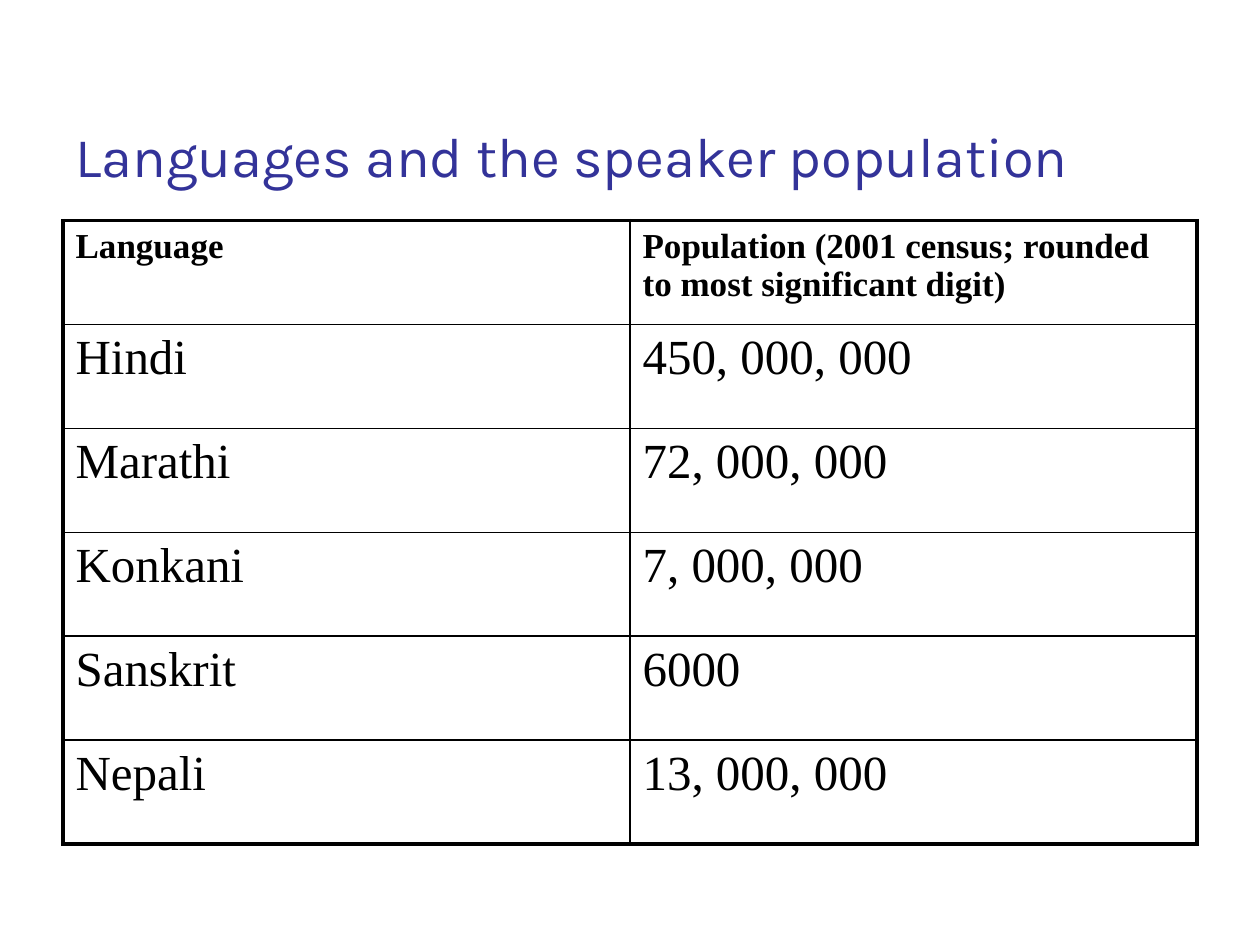
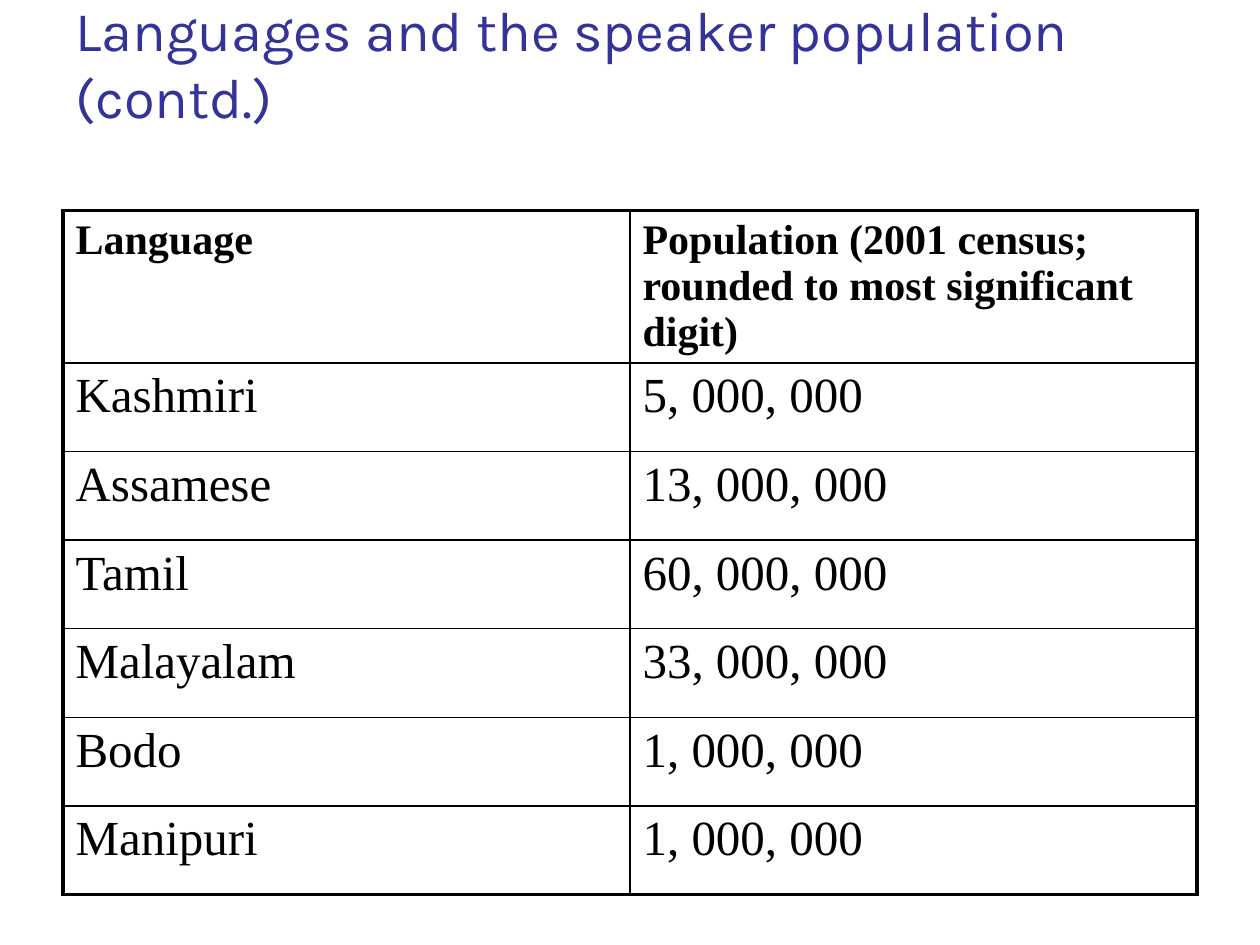
import pptx
import pptx.util
import pptx.dml.color
import pptx.enum.text
import lxml.etree
from dataclasses import dataclass


@dataclass(frozen=True)
class Theme:
    title_color: str = "333399"
    ink: str = "000000"
    title_font: str = "Karla"
    table_font: str = "Times New Roman"
    title_size: int = 32
    body_size: int = 28
    outer_line: float = 2.25
    inner_line: float = 1


THEME = Theme()
HEADINGS = ("Language", "Population (2001 census; rounded to most significant digit)")
TITLE = "Languages and the speaker population"

SLIDES = [
    dict(
        title=TITLE, title_rows=12.5,
        table_top=17.5, table_rows=49.5, header_rows=8.25, header_size=20,
        populations=[
            ("Hindi", "450, 000, 000"),
            ("Marathi", "72, 000, 000"),
            ("Konkani", "7, 000, 000"),
            ("Sanskrit", "6000"),
            ("Nepali", "13, 000, 000"),
        ],
    ),
    dict(
        title=f"{TITLE} (contd.)", title_rows=7.8,
        table_top=16.7, table_rows=54.3, header_rows=12.1, header_size=24,
        populations=[
            ("Kashmiri", "5, 000, 000"),
            ("Assamese", "13, 000, 000"),
            ("Tamil", "60, 000, 000"),
            ("Malayalam", "33, 000, 000"),
            ("Bodo", "1, 000, 000"),
            ("Manipuri", "1, 000, 000"),
        ],
    ),
]


def write_text(text_frame, text, *, font, size, color, bold=False):
    """Put formatted text in the first paragraph of a frame."""
    run = text_frame.paragraphs[0].add_run()
    run.text = text
    run.font.name = font
    run.font.size = pptx.util.Pt(size)
    run.font.bold = bold
    run.font.color.rgb = pptx.dml.color.RGBColor.from_string(color)


def set_borders(cell, color, widths):
    """Draw the cell's sides; widths maps L, R, T, B (in that order) to points."""
    properties = cell._tc.get_or_add_tcPr()
    namespace = properties.nsmap["a"]
    for position, (side, width) in enumerate(widths.items()):
        line = lxml.etree.Element(f"{{{namespace}}}ln{side}", w=str(pptx.util.Pt(width)))
        fill = lxml.etree.SubElement(line, f"{{{namespace}}}solidFill")
        lxml.etree.SubElement(fill, f"{{{namespace}}}srgbClr", val=color)
        properties.insert(position, line)


class Deck:
    """Holds the theme, a 20 by 75 grid and the current slide."""

    columns, rows = 20, 75

    def __init__(self, theme):
        self.theme = theme
        self.presentation = pptx.Presentation()
        self.presentation.slide_width = pptx.util.Inches(10)
        self.presentation.slide_height = pptx.util.Inches(7.5)
        self.slide = None

    def across(self, columns):
        return round(self.presentation.slide_width * columns / self.columns)

    def down(self, rows):
        return round(self.presentation.slide_height * rows / self.rows)

    def area(self, top, height):
        """The full-width area between the side margins."""
        return self.across(1), self.down(top), self.across(18), self.down(height)

    def add_slide(self):
        self.slide = self.presentation.slides.add_slide(self.presentation.slide_layouts[6])

    def add_title(self, text, height):
        text_frame = self.slide.shapes.add_textbox(*self.area(3, height)).text_frame
        text_frame.word_wrap = True
        text_frame.auto_size = pptx.enum.text.MSO_AUTO_SIZE.NONE
        text_frame.vertical_anchor = pptx.enum.text.MSO_ANCHOR.BOTTOM
        write_text(text_frame, text, font=self.theme.title_font,
                   size=self.theme.title_size, color=self.theme.title_color)

    def add_table(self, records, top, height, header_height, header_size):
        theme = self.theme
        last_row, last_column = len(records) - 1, len(records[0]) - 1
        table = self.slide.shapes.add_table(
            len(records), len(records[0]), *self.area(top, height)).table
        table.first_row = table.horz_banding = False

        # The rows below the header share the remaining height
        body_height = (height - header_height) / last_row
        for row_index, record in enumerate(records):
            is_header = row_index == 0
            table.rows[row_index].height = self.down(header_height if is_header else body_height)
            for column_index, text in enumerate(record):
                cell = table.cell(row_index, column_index)
                cell.fill.background()
                write_text(cell.text_frame, text, font=theme.table_font, color=theme.ink,
                           size=header_size if is_header else theme.body_size, bold=is_header)
                on_edge = {"L": column_index == 0, "R": column_index == last_column,
                           "T": is_header, "B": row_index == last_row}
                set_borders(cell, theme.ink, {
                    side: theme.outer_line if outer else theme.inner_line
                    for side, outer in on_edge.items()})


def main():
    deck = Deck(THEME)
    for content in SLIDES:
        deck.add_slide()
        deck.add_title(content["title"], content["title_rows"])
        deck.add_table([HEADINGS, *content["populations"]], content["table_top"],
                       content["table_rows"], content["header_rows"], content["header_size"])
    deck.presentation.save("out.pptx")


if __name__ == "__main__":
    main()
